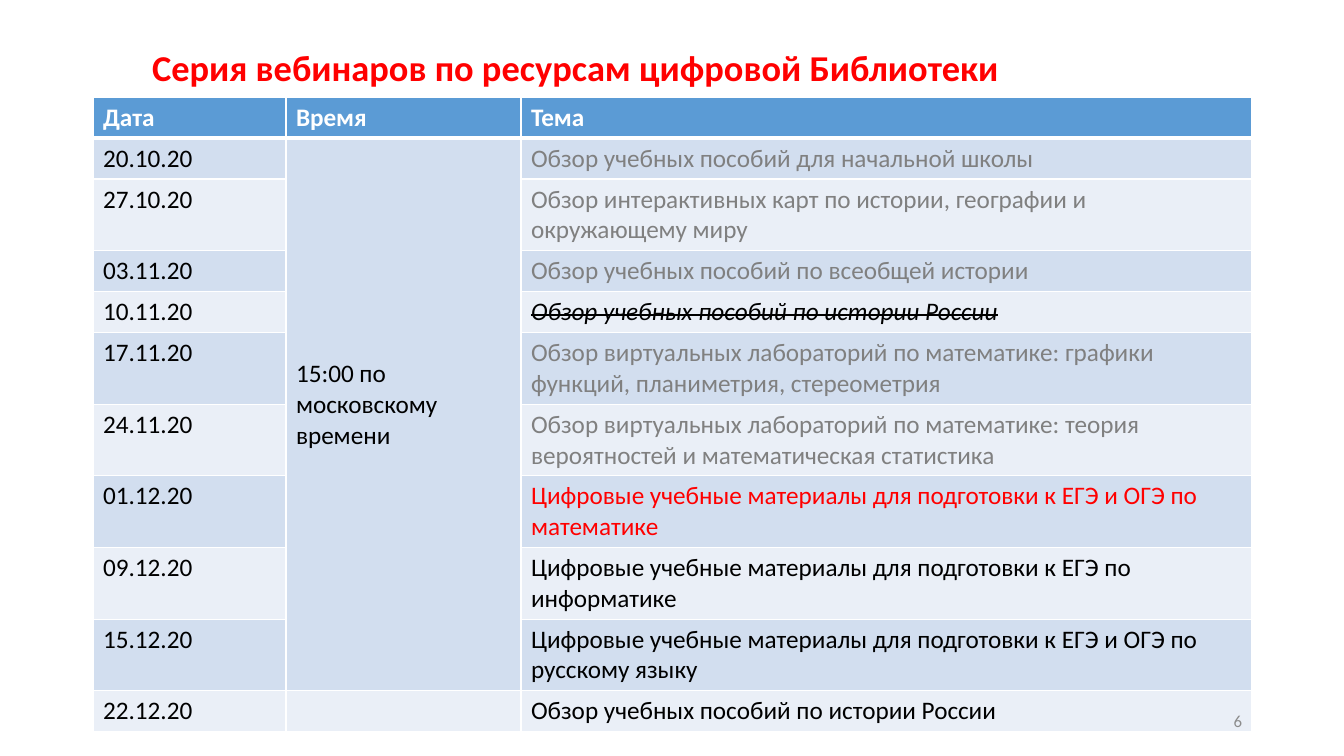
from lxml.etree import SubElement
from pptx import Presentation
from pptx.dml.color import RGBColor
from pptx.enum.text import MSO_ANCHOR, MSO_AUTO_SIZE, PP_ALIGN
from pptx.oxml import parse_xml
from pptx.oxml.ns import nsdecls, qn
from pptx.util import Pt

TITLE = "Серия вебинаров по ресурсам цифровой Библиотеки"
HEADER = ("Дата", "Время", "Тема")
TIME = "15:00 по московскому времени"
PAST, PLANNED, NEXT, CANCELLED = "past", "planned", "next", "cancelled"
WEBINARS = [
    ("20.10.20", "Обзор учебных пособий для начальной школы", PAST),
    ("27.10.20", "Обзор интерактивных карт по истории, географии и окружающему миру", PAST),
    ("03.11.20", "Обзор учебных пособий по всеобщей истории", PAST),
    ("10.11.20", "Обзор учебных пособий по истории России", CANCELLED),
    ("17.11.20", "Обзор виртуальных лабораторий по математике: графики функций, планиметрия, стереометрия", PAST),
    ("24.11.20", "Обзор виртуальных лабораторий по математике: теория вероятностей и математическая статистика", PAST),
    ("01.12.20", "Цифровые учебные материалы для подготовки к ЕГЭ и ОГЭ по математике", NEXT),
    ("09.12.20", "Цифровые учебные материалы для подготовки к ЕГЭ по информатике", PLANNED),
    ("15.12.20", "Цифровые учебные материалы для подготовки к ЕГЭ и ОГЭ по русскому языку", PLANNED),
    ("22.12.20", "Обзор учебных пособий по истории России", PLANNED),
]
STATUS_FORMATS = {
    PAST: {"color": "808080"},
    PLANNED: {},
    NEXT: {"color": "FF0000"},
    CANCELLED: {"italic": True},
}
CELL_FORMAT = {"name": "Calibri", "size": Pt(18), "bold": False, "color": "000000"}
HEADER_FORMAT = {**CELL_FORMAT, "bold": True, "color": "FFFFFF"}
TITLE_FORMAT = {"name": "Calibri", "size": Pt(26), "bold": True, "color": "FF0000"}
NUMBER_FORMAT = {"name": "Calibri", "size": Pt(12), "color": "8C8C8C"}
HEADER_FILL, BANDS = "5B9BD5", ("EAEFF7", "D2DEEF")
COLUMN_WIDTHS = (193, 235, 731)
ROW_HEIGHT = 41
TIME_ROWS = 9


def px(length):
    return round(length * 12192000 / 1344)


def color(value):
    return RGBColor.from_string(value)


def write(text_frame, text, formats):
    run = text_frame.paragraphs[0].add_run()
    run.text = text
    for name, value in formats.items():
        if name == "color":
            run.font.color.rgb = color(value)
        else:
            setattr(run.font, name, value)
    return run


def set_borders(cell, widths):
    properties = cell._tc.get_or_add_tcPr()
    for index, (side, width) in enumerate(widths.items()):
        line = parse_xml(f'<a:ln{side} {nsdecls("a")} w="{Pt(width)}"/>')
        fill = SubElement(line, qn("a:solidFill"))
        SubElement(fill, qn("a:srgbClr"), val="FFFFFF")
        properties.insert(index, line)


def add_title(slide):
    title = slide.shapes.title
    title.left, title.top, title.width, title.height = map(px, (142, 17, 1110, 121))
    frame = title.text_frame
    frame.auto_size = MSO_AUTO_SIZE.NONE
    frame.vertical_anchor = MSO_ANCHOR.MIDDLE
    frame.margin_bottom = px(21)
    frame.paragraphs[0].alignment = PP_ALIGN.LEFT
    frame.paragraphs[0].line_spacing = 0.9
    write(frame, TITLE, TITLE_FORMAT)


def add_schedule(slide):
    row_count = len(WEBINARS) + 1
    table = slide.shapes.add_table(
        row_count, len(HEADER), px(93), px(97),
        px(sum(COLUMN_WIDTHS)), px(ROW_HEIGHT * row_count)).table
    for column, width in zip(table.columns, COLUMN_WIDTHS):
        column.width = px(width)
    for index, row in enumerate(table.rows):
        row.height = px(ROW_HEIGHT)
        for cell in row.cells:
            cell.fill.solid()
            cell.fill.fore_color.rgb = color(BANDS[index % 2] if index else HEADER_FILL)
            set_borders(cell, {"L": 1, "R": 1, "T": 3 if index == 1 else 1, "B": 1 if index else 3})
    for index, heading in enumerate(HEADER):
        write(table.cell(0, index).text_frame, heading, HEADER_FORMAT)
    for index, (date, topic, status) in enumerate(WEBINARS, 1):
        write(table.cell(index, 0).text_frame, date, CELL_FORMAT)
        run = write(table.cell(index, 2).text_frame, topic, {**CELL_FORMAT, **STATUS_FORMATS[status]})
        if status == CANCELLED:
            run.font._element.set("strike", "sngStrike")
    time_cell = table.cell(1, 1)
    time_cell.merge(table.cell(TIME_ROWS, 1))
    time_cell.vertical_anchor = MSO_ANCHOR.MIDDLE
    time_cell.margin_bottom = px(24)
    write(time_cell.text_frame, TIME, CELL_FORMAT)


def add_number(slide):
    frame = slide.shapes.add_textbox(*map(px, (950, 701, 302, 40))).text_frame
    frame.word_wrap = True
    frame.vertical_anchor = MSO_ANCHOR.MIDDLE
    frame.paragraphs[0].alignment = PP_ALIGN.RIGHT
    write(frame, "6", NUMBER_FORMAT)


def main():
    """Build the webinar schedule slide."""
    presentation = Presentation()
    presentation.slide_width, presentation.slide_height = px(1344), px(756)
    slide = presentation.slides.add_slide(presentation.slide_layouts[5])
    add_title(slide)
    add_schedule(slide)
    add_number(slide)
    presentation.save("out.pptx")


if __name__ == "__main__":
    main()
